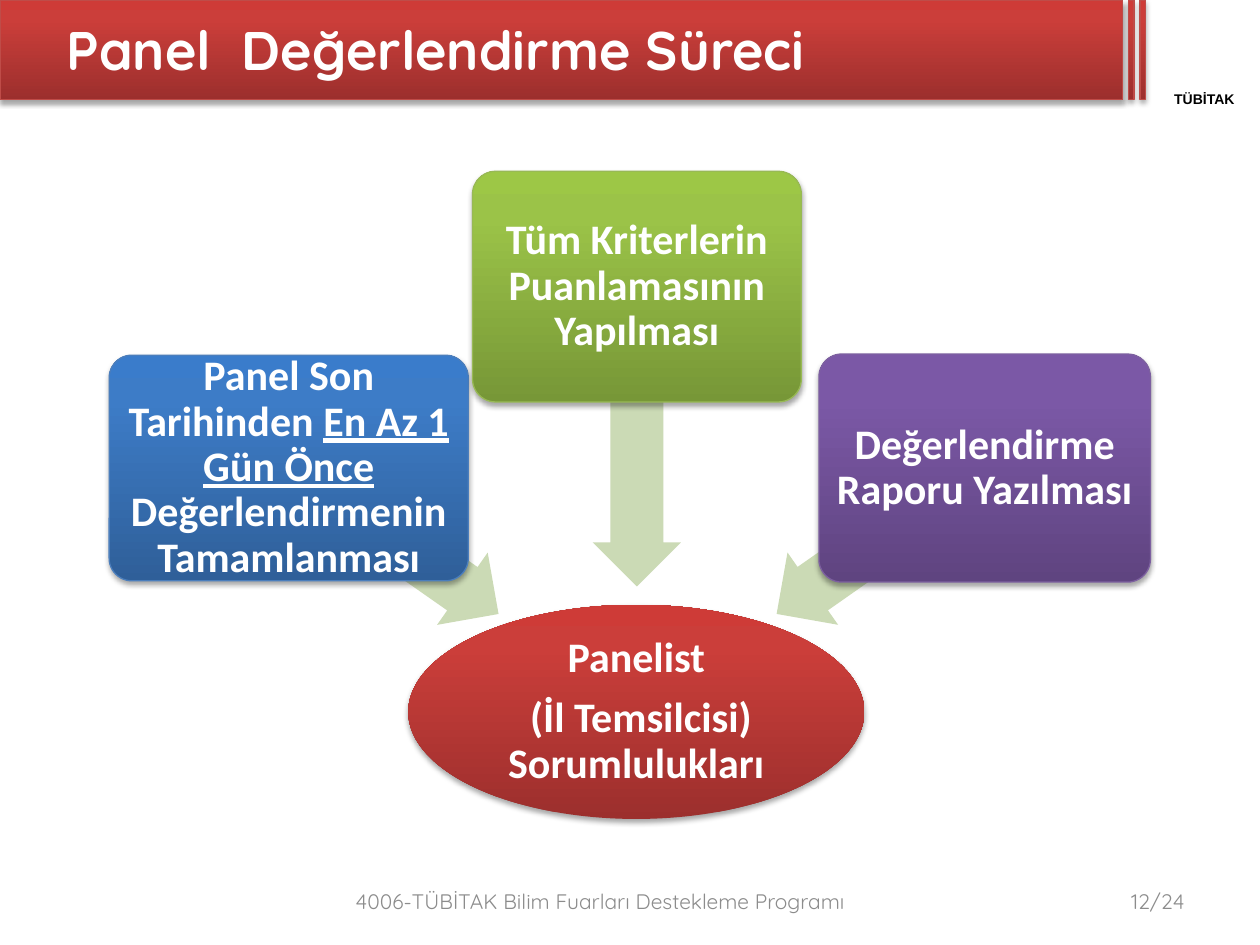
from copy import deepcopy
from lxml.etree import SubElement
from pptx import Presentation
from pptx.dml.color import RGBColor
from pptx.enum.shapes import MSO_SHAPE as Preset
from pptx.enum.text import MSO_ANCHOR as Anchor, MSO_AUTO_SIZE as AutoSize, PP_ALIGN as Align
from pptx.oxml.ns import qn
from pptx.util import Pt

WHITE = RGBColor(0xFF, 0xFF, 0xFF)
BLACK = RGBColor(0, 0, 0)
GRAY = RGBColor(0x8C, 0x8C, 0x8C)
ARROW = RGBColor(0xCB, 0xDA, 0xB5)
RED_LINE = RGBColor(0xBF, 0x4C, 0x48)
BLUE_LINE = RGBColor(0x4B, 0x7E, 0xBC)
GREEN_LINE = RGBColor(0x98, 0xB9, 0x55)
PURPLE_LINE = RGBColor(0x7D, 0x60, 0xA0)
RED = RGBColor(0x9C, 0x2F, 0x2D), RGBColor(0xCB, 0x3E, 0x3A), RGBColor(0xCE, 0x3B, 0x37)
BLUE = RGBColor(0x2F, 0x5F, 0x99), RGBColor(0x3D, 0x7C, 0xC7), RGBColor(0x3A, 0x7C, 0xCB)
GREEN = RGBColor(0x77, 0x97, 0x37), RGBColor(0x9B, 0xC3, 0x48), RGBColor(0x9D, 0xC7, 0x46)
PURPLE = RGBColor(0x5F, 0x44, 0x80), RGBColor(0x7B, 0x58, 0xA6), RGBColor(0x7C, 0x57, 0xA8)

BAR_HEIGHT = 57
BARS = [(0, 641.5), (645, 3), (651.5, 3)]

LABELS = [
    ("TÜBİTAK", (651.5, 51.8, 73.5, 9.5), 0, "Arial", 8, BLACK, True, Align.CENTER),
    ("Panel  Değerlendirme Süreci", (31, 0, 612, 55.5), 7.2, "Quicksand", 31, WHITE, True, Align.LEFT),
    ("4006-TÜBİTAK Bilim Fuarları Destekleme Programı", (93.6, 500.4, 499, 28.8), 7.2,
     "Quicksand", 12, GRAY, False, Align.CENTER),
    ("12/24", (516.2, 500.4, 167.8, 28.8), 7.2, "Quicksand", 12, GRAY, False, Align.RIGHT),
]

GOAL = [[("Panelist", False)], [(" (İl Temsilcisi) Sorumlulukları", False)]]
GOAL_PLACE = (233.3, 345.6, 260.6, 122.4)

ARROW_HEIGHT = 50.4
TASKS = [
    ([("Panel Son Tarihinden ", False), ("En Az 1 Gün Önce ", True),
      ("Değerlendirmenin Tamamlanması", False)],
     (62.4, 203, 205.2, 128.9), BLUE, BLUE_LINE, (151.9, 283.7, 146.2), 215),
    ([("Tüm Kriterlerin Puanlamasının Yapılması", False)],
     (270, 97.9, 187.9, 131.8), GREEN, GREEN_LINE, (277.9, 223.9, 172.1), 270),
    ([("Değerlendirme Raporu Yazılması", False)],
     (468, 202.3, 189.4, 130.3), PURPLE, PURPLE_LINE, (430.6, 283.7, 146.2), 325),
]


def set_gradient(shape, colors):
    shape.fill.gradient()
    shape.fill.gradient_angle = 90
    stop_list = next(shape._element.spPr.iter(qn("a:gsLst")))
    stop_list.append(deepcopy(stop_list[-1]))
    for stop, color, position in zip(shape.fill.gradient_stops, colors, (0, 0.8, 1)):
        stop.color.rgb = color
        stop.position = position


def add_shadow(shape):
    effects = shape._element.spPr.find(qn("a:effectLst"))
    shadow = SubElement(effects, qn("a:outerShdw"), blurRad=str(Pt(3.1)), dist=str(Pt(1.8)),
                        dir="5400000", rotWithShape="0")
    color = SubElement(shadow, qn("a:srgbClr"), val="000000")
    SubElement(color, qn("a:alpha"), val="35000")


def add_plain(page, preset, place):
    shape = page.shapes.add_shape(preset, *map(Pt, place))
    shape.shadow.inherit = False
    shape.line.fill.background()
    return shape


def add_glossy(page, preset, place, colors, line=None):
    shape = add_plain(page, preset, place)
    set_gradient(shape, colors)
    if line is not None:
        shape.line.color.rgb = line
        shape.line.width = Pt(0.75)
    add_shadow(shape)
    return shape


def prepare_frame(shape, inset):
    frame = shape.text_frame
    frame.word_wrap = True
    frame.auto_size = AutoSize.NONE
    frame.vertical_anchor = Anchor.MIDDLE
    frame.margin_left = frame.margin_right = Pt(inset)
    frame.margin_top = frame.margin_bottom = Pt(inset / 2 if inset > 5 else inset)
    return frame


def style(font, name, size, color, bold):
    font.name, font.size, font.bold = name, Pt(size), bold
    font.color.rgb = color


def fill_text(shape, paragraphs, inset):
    frame = prepare_frame(shape, inset)
    for index, parts in enumerate(paragraphs):
        para = frame.add_paragraph() if index else frame.paragraphs[0]
        para.alignment = Align.CENTER
        para.line_spacing = 0.9
        para.space_after = Pt(8.4)
        for text, underlined in parts:
            span = para.add_run()
            span.text = text
            style(span.font, "Calibri", 24, WHITE, True)
            span.font.underline = underlined


def add_label(page, text, place, inset, name, size, color, bold, align):
    box = page.shapes.add_textbox(*map(Pt, place))
    para = prepare_frame(box, inset).paragraphs[0]
    para.text = text
    para.alignment = align
    style(para.runs[0].font, name, size, color, bold)


def main():
    deck = Presentation()
    deck.slide_width, deck.slide_height = Pt(720), Pt(540)
    page = deck.slides.add_slide(deck.slide_layouts[6])

    for left, width in BARS:
        add_glossy(page, Preset.RECTANGLE, (left, 0, width, BAR_HEIGHT), RED, RED_LINE)
    for label in LABELS:
        add_label(page, *label)

    goal = add_glossy(page, Preset.OVAL, GOAL_PLACE, RED)
    fill_text(goal, GOAL, 1.4)

    for parts, place, colors, line, (left, top, length), angle in TASKS:
        arrow = add_plain(page, Preset.LEFT_ARROW, (left, top, length, ARROW_HEIGHT))
        arrow.adjustments[0] = 0.6
        arrow.rotation = angle
        arrow.fill.solid()
        arrow.fill.fore_color.rgb = ARROW
        task = add_glossy(page, Preset.ROUNDED_RECTANGLE, place, colors, line)
        task.adjustments[0] = 0.1
        fill_text(task, [parts], 3.6)

    deck.save("out.pptx")


if __name__ == "__main__":
    main()
